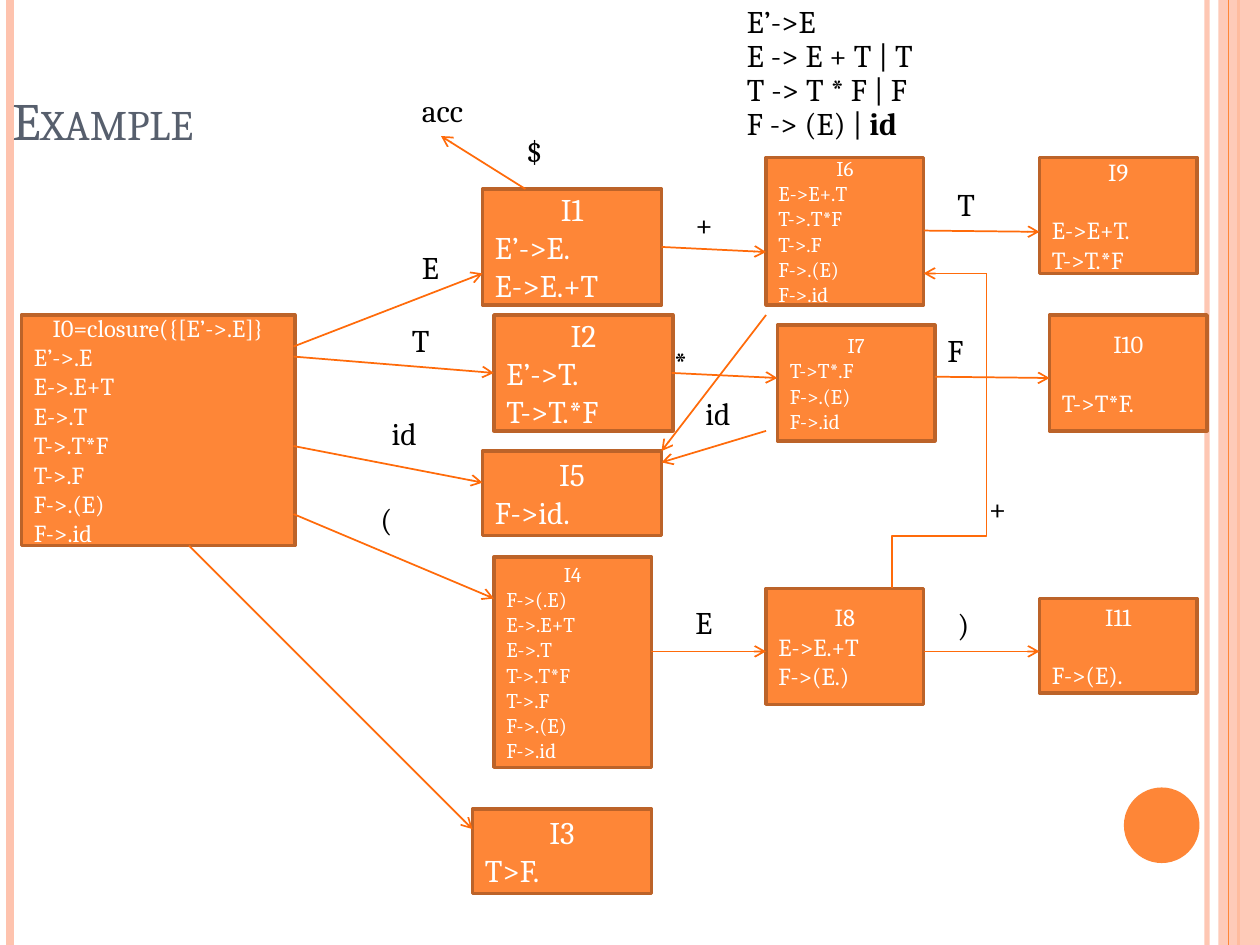
import pptx
import pptx.dml.color
import pptx.enum.shapes
import pptx.enum.text
import pptx.oxml.ns
import pptx.util
from lxml import etree
from pptx.util import Inches

FONT = "Cambria"
ORANGE, BORDER, ARROW, PALE = "FE8637", "BC6329", "FF6B0A", "FEC3AE"
SHAPE = pptx.enum.shapes.MSO_SHAPE
CONNECTOR = pptx.enum.shapes.MSO_CONNECTOR
ANCHOR = pptx.enum.text.MSO_ANCHOR
ALIGN = pptx.enum.text.PP_ALIGN

# name, left, top, width, height, text size, gap below the heading, items
STATES = [
    ("I0=closure({[E’->.E]}", 0.17, 2.5, 2.17, 1.83, 14, False,
     ["E’->.E", "E->.E+T", "E->.T", "T->.T*F", "T->.F", "F->.(E)", "F->.id"]),
    ("I1", 3.83, 1.5, 1.42, 0.92, 18, False, ["E’->E.", "E->E.+T"]),
    ("I2", 3.92, 2.5, 1.42, 0.92, 18, False, ["E’->T.", "T->T.*F"]),
    ("I3", 3.75, 6.42, 1.42, 0.67, 18, False, ["T>F."]),
    ("I4", 3.92, 4.42, 1.25, 1.67, 12, False,
     ["F->(.E)", "E->.E+T", "E->.T", "T->.T*F", "T->.F", "F->.(E)", "F->.id"]),
    ("I5", 3.83, 3.58, 1.42, 0.67, 18, False, ["F->id."]),
    ("I6", 6.08, 1.25, 1.25, 1.17, 12, False,
     ["E->E+.T", "T->.T*F", "T->.F", "F->.(E)", "F->.id"]),
    ("I7", 6.17, 2.58, 1.25, 0.92, 12, False, ["T->T*.F", "F->.(E)", "F->.id"]),
    ("I8", 6.08, 4.67, 1.25, 0.92, 14, False, ["E->E.+T", "F->(E.)"]),
    ("I9", 8.25, 1.25, 1.25, 0.92, 14, True, ["E->E+T.", "T->T.*F"]),
    ("I10", 8.33, 2.5, 1.25, 0.92, 14, True, ["T->T*F."]),
    ("I11", 8.25, 4.75, 1.25, 0.75, 14, True, ["F->(E)."]),
]

# start, end of each arrow
TRANSITIONS = [
    ((2.33, 2.75), (3.83, 2.17)), ((2.33, 2.83), (3.92, 2.96)),
    ((2.33, 4.08), (3.92, 4.75)), ((2.33, 3.54), (3.83, 3.83)),
    ((1.5, 4.33), (3.75, 6.58)), ((5.25, 1.96), (6.08, 2)),
    ((5.33, 2.96), (6.17, 3)), ((5.17, 5.17), (6.08, 5.17)),
    ((7.33, 5.17), (8.25, 5.17)), ((7.33, 1.83), (8.25, 1.84)),
    ((7.42, 2.99), (8.33, 3)), ((6.08, 3.42), (5.25, 3.67)),
    ((6.08, 2.5), (5.25, 3.58)), ((4.17, 1.5), (3.5, 1.08)),
]

# text, left, top, width
LABELS = [
    ("E", 3.25, 1.92, 0.41), ("T", 3.17, 2.5, 0.41), ("(", 2.92, 3.92, 0.31),
    ("id", 3.01, 3.24, 0.46), ("+", 5.42, 1.58, 0.41), ("*", 5.25, 2.67, 0.37),
    ("E", 5.42, 4.74, 0.41), (")", 7.5, 4.75, 0.31), ("T", 7.5, 1.42, 0.41),
    ("F", 7.42, 2.58, 0.39), ("id", 5.5, 3.08, 0.46), ("+", 7.75, 3.83, 0.39),
    ("$", 4.08, 1, 0.37), ("acc", 3.25, 0.67, 0.65),
]


def color(value):
    return pptx.dml.color.RGBColor.from_string(value)


def add_child(parent, tag, **attributes):
    child = etree.SubElement(parent, pptx.oxml.ns.qn(tag))
    for name, value in attributes.items():
        child.set(name, value)
    return child


def set_alpha(fill_format, percent):
    """Make a solid fill partly transparent."""
    solid = fill_format._xPr.find(pptx.oxml.ns.qn("a:solidFill"))
    add_child(solid[0], "a:alpha", val=str(percent * 1000))


def style_font(paragraph, size, value):
    paragraph.font.name = FONT
    paragraph.font.size = pptx.util.Pt(size)
    paragraph.font.color.rgb = color(value)


def add_line(slide, start, end, value=ARROW, width=1, arrow=False,
             kind=CONNECTOR.STRAIGHT):
    line = slide.shapes.add_connector(kind, *map(Inches, start + end))
    line.line.color.rgb = color(value)
    line.line.width = pptx.util.Pt(width)
    if arrow:
        add_child(line.line._get_or_add_ln(), "a:tailEnd", type="arrow")
    add_child(line._element.spPr, "a:effectLst")
    return line


def add_filled_shape(slide, kind, left, top, width, height, value):
    shape = slide.shapes.add_shape(kind, *map(Inches, (left, top, width, height)))
    shape.shadow.inherit = False
    shape.fill.solid()
    shape.fill.fore_color.rgb = color(value)
    shape.line.fill.background()
    return shape


def add_text_box(slide, left, top, width, height):
    box = slide.shapes.add_textbox(*map(Inches, (left, top, width, height)))
    box.text_frame.word_wrap = True
    return box.text_frame


def draw_frame(slide, left, top, width, height):
    """Vertical rules, side band and disc around the page."""
    bottom, right = top + height, left + width
    for x, value, weight in [(right - 0.42, PALE, 3), (left + 0.08, PALE, 4.5),
                             (right - 0.17, ORANGE, 1.5)]:
        rule = add_line(slide, (x, top), (x, bottom), value, weight)
        if weight == 3:
            set_alpha(rule.line.fill, 93)
    band = add_filled_shape(slide, SHAPE.RECTANGLE, right - 0.33, top, 0.33, height, PALE)
    set_alpha(band.fill, 87)
    add_line(slide, (right - 0.25, top), (right - 0.25, bottom), ORANGE, 0.75)
    add_filled_shape(slide, SHAPE.OVAL, right - 1.08, bottom - 1.25, 0.6, 0.6, ORANGE)


def draw_title(slide, left, top, width, height):
    frame = add_text_box(slide, left, top, width, height)
    frame.vertical_anchor = ANCHOR.BOTTOM
    paragraph = frame.paragraphs[0]
    run = paragraph.add_run()
    run.text = "Example"
    style_font(run, 30, "575F6D")
    run.font._element.set("cap", "small")


def draw_grammar(slide, left, top, width, height):
    frame = add_text_box(slide, left, top, width, height)
    frame.text = "E’->E\nE -> E + T | T\nT -> T * F | F\nF -> (E) | "
    for paragraph in frame.paragraphs:
        style_font(paragraph, 18, "000000")
        paragraph.line_spacing = 0.9
        properties = paragraph._p.get_or_add_pPr()
        properties.set("marL", str(Inches(0.5)))
        properties.set("indent", str(Inches(-0.5)))
    terminal = frame.paragraphs[-1].add_run()
    terminal.text = "id"
    terminal.font.bold = True


def draw_state(slide, name, left, top, width, height, size, gap, items):
    """One item set: centred heading above left-aligned items."""
    shape = add_filled_shape(slide, SHAPE.RECTANGLE, left, top, width, height, ORANGE)
    shape.line.color.rgb = color(BORDER)
    shape.line.width = pptx.util.Pt(2)
    frame = shape.text_frame
    frame.word_wrap = True
    frame.vertical_anchor = ANCHOR.MIDDLE
    frame.text = "\n".join([name] + items)
    for paragraph in frame.paragraphs:
        style_font(paragraph, size, "FFFFFF")
        paragraph.alignment = ALIGN.LEFT
    heading = frame.paragraphs[0]
    heading.alignment = ALIGN.CENTER
    if gap:
        heading.space_after = pptx.util.Pt(1.2 * size)


def draw_label(slide, text, left, top, width):
    frame = add_text_box(slide, left, top, width, 0.51)
    frame.word_wrap = False
    frame.text = text
    style_font(frame.paragraphs[0], 18, "000000")


def draw_return_path(slide, left, top, width, height):
    """Route from I8 up and back to the right side of I6."""
    right, bottom = left + width, top + height
    elbow = add_line(slide, (right - 0.21, bottom - 0.04), (left - 0.04 + 0.0, bottom - 0.79),
                     kind=CONNECTOR.ELBOW)
    # A quarter turn makes the elbow leave I8 vertically
    elbow.left, elbow.top = Inches(left - 0.29), Inches(bottom - 0.79)
    elbow.width, elbow.height = Inches(0.83), Inches(0.75)
    elbow._element.spPr.find(pptx.oxml.ns.qn("a:xfrm")).set("rot", "5400000")
    add_line(slide, (right, bottom - 0.83), (right, top))
    add_line(slide, (right, top), (left, top), arrow=True)


def main():
    presentation = pptx.Presentation()
    presentation.slide_width, presentation.slide_height = Inches(10), Inches(7.5)
    slide = presentation.slides.add_slide(presentation.slide_layouts[6])
    draw_frame(slide, 0, 0, 10, 7.5)
    draw_title(slide, 0, 0, 9, 1.25)
    draw_grammar(slide, 5.83, 0, 4.17, 1.19)
    for state in STATES:
        draw_state(slide, *state)
    for start, end in TRANSITIONS:
        add_line(slide, start, end, arrow=True)
    draw_return_path(slide, 7.33, 2.17, 0.5, 2.5)
    for label in LABELS:
        draw_label(slide, *label)
    presentation.save("out.pptx")


if __name__ == "__main__":
    main()
